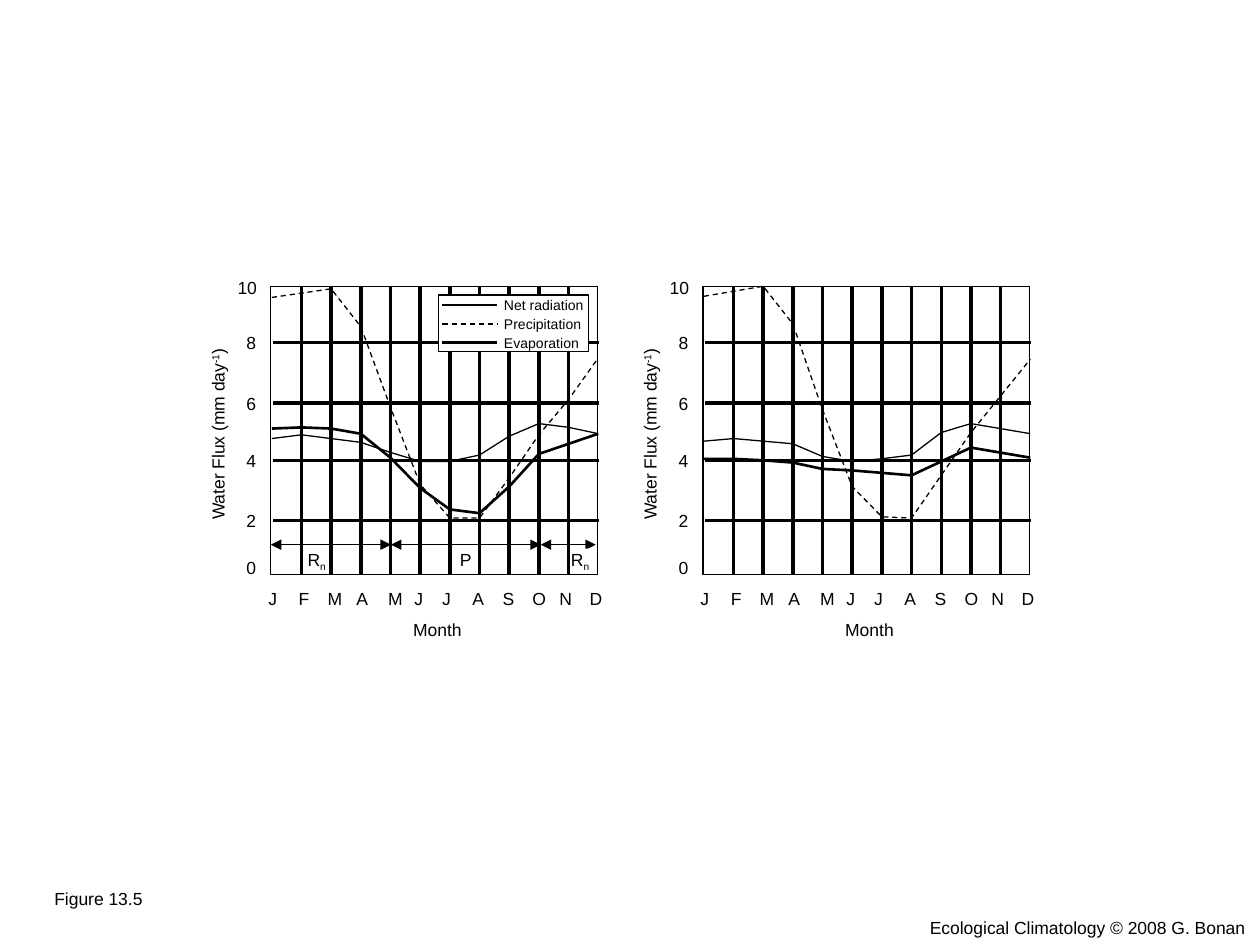
import pptx
import pptx.dml.color
import pptx.enum.dml
import pptx.enum.shapes
import pptx.enum.text
import pptx.oxml
import pptx.oxml.ns
import pptx.util

Cm = pptx.util.Cm
Pt = pptx.util.Pt
ALIGN = pptx.enum.text.PP_ALIGN
DASH = pptx.enum.dml.MSO_LINE.DASH
BLACK = pptx.dml.color.RGBColor(0x00, 0x00, 0x00)
WHITE = pptx.dml.color.RGBColor(0xFF, 0xFF, 0xFF)

PANEL_WIDTH, PANEL_HEIGHT, PANEL_TOP = 6.58, 5.82, 5.77
MONTH_STEP = PANEL_WIDTH / 11
MONTHS = "JFMAMJJASOND"
MONTH_CENTRES = (0.04, 0.67, 1.27, 1.84, 2.49, 2.98,
                 3.54, 4.18, 4.79, 5.4, 5.94, 6.55)
# Tick label and its distance below the top of the panel
TICKS = {"10": 0.02, "8": 1.14, "6": 2.36, "4": 3.51, "2": 4.72, "0": 5.68}

STYLES = {
    "Net radiation": {"width": 0.75},
    "Precipitation": {"width": 0.75, "dash": DASH},
    "Evaporation": {"width": 1.5},
}
# Water flux in mm per day from January to December; None adds no point
LEFT_SERIES = {
    "Net radiation": (4.72, 4.85, 4.72, 4.59, 4.24, 3.93,
                      3.93, 4.15, 4.8, 5.24, 5.11, 4.89),
    "Precipitation": (9.61, None, 9.91, 8.6, 5.81, 3.14,
                      1.97, 1.97, 3.36, 4.85, 6.07, 7.51),
    "Evaporation": (5.07, 5.11, 5.07, 4.89, 4.06, 3.01,
                    2.27, 2.14, 3.06, 4.19, None, 4.89),
}
RIGHT_SERIES = {
    "Precipitation": (9.65, None, 10, 8.69, 5.72, 3.06,
                      2.01, 1.97, None, 4.93, None, 7.47),
    "Net radiation": (4.63, 4.72, 4.63, 4.54, 4.1, 3.93,
                      4.02, 4.15, 4.93, 5.24, None, 4.89),
    "Evaporation": (4.02, 4.02, 3.97, 3.89, 3.67, 3.62,
                    None, 3.45, None, 4.41, None, 4.06),
}


def format_text(frame, spans, size=10, align=ALIGN.LEFT, wrap=False, inset=None):
    """Fill a text frame with (text, baseline percent) spans or one string."""
    if isinstance(spans, str):
        spans = [(spans, 0)]
    frame.word_wrap = wrap
    frame.auto_size = pptx.enum.text.MSO_AUTO_SIZE.SHAPE_TO_FIT_TEXT
    frame.vertical_anchor = pptx.enum.text.MSO_ANCHOR.TOP
    if inset is not None:
        frame.margin_left = frame.margin_right = Cm(inset)
        frame.margin_top = frame.margin_bottom = Cm(inset)
    para = frame.paragraphs[0]
    para.alignment = align
    for text, baseline in spans:
        span = para.add_run()
        span.text = text
        span.font.name = "Arial"
        span.font.size = Pt(size)
        span.font.color.rgb = BLACK
        if baseline:
            span.font._element.set("baseline", str(baseline * 1000))


def add_label(page, spans, centre_x, centre_y, width, height=0.68, **options):
    box = page.shapes.add_textbox(Cm(centre_x - width / 2), Cm(centre_y - height / 2),
                                  Cm(width), Cm(height))
    format_text(box.text_frame, spans, **options)
    return box


def format_line(line, width, dash=None):
    line.color.rgb = BLACK
    line.width = Pt(width)
    if dash is not None:
        line.dash_style = dash


def add_line(page, x1, y1, x2, y2, width=0, dash=None, arrows=False):
    line = page.shapes.add_connector(pptx.enum.shapes.MSO_CONNECTOR.STRAIGHT,
                                     Cm(x1), Cm(y1), Cm(x2), Cm(y2))
    format_line(line.line, width, dash)
    if arrows:
        outline = line.line._get_or_add_ln()
        for end in ("a:headEnd", "a:tailEnd"):
            outline.append(pptx.oxml.parse_xml(
                f'<{end} {pptx.oxml.ns.nsdecls("a")} type="triangle"/>'))
    line._element.spPr.append(pptx.oxml.parse_xml(
        f'<a:effectLst {pptx.oxml.ns.nsdecls("a")}/>'))


def add_rectangle(page, left, top, width, height, filled=False, outlined=True):
    box = page.shapes.add_shape(pptx.enum.shapes.MSO_SHAPE.RECTANGLE,
                                Cm(left), Cm(top), Cm(width), Cm(height))
    box.shadow.inherit = False
    if filled:
        box.fill.solid()
        box.fill.fore_color.rgb = WHITE
    else:
        box.fill.background()
    if outlined:
        format_line(box.line, 0.75)
    else:
        box.line.fill.background()
    return box


def add_curve(page, left, top, values, style):
    points = [(Cm(left + month * MONTH_STEP),
               Cm(top + PANEL_HEIGHT * (1 - value / 10)))
              for month, value in enumerate(values) if value is not None]
    builder = page.shapes.build_freeform(*points[0])
    builder.add_line_segments(points[1:], close=False)
    curve = builder.convert_to_shape()
    curve.shadow.inherit = False
    curve.fill.background()
    format_line(curve.line, **style)


def add_panel(page, left, top, series):
    """Draw one graph: frame, grid, curves and axis labels."""
    bottom = top + PANEL_HEIGHT
    add_rectangle(page, left, top, PANEL_WIDTH, PANEL_HEIGHT)
    for month in range(1, 11):
        x = left + 0.02 + month * MONTH_STEP
        add_line(page, x, bottom, x, top)
    for label, offset in TICKS.items():
        if label not in ("0", "10"):
            add_line(page, left + 0.04, top + offset,
                     left + 0.04 + PANEL_WIDTH, top + offset)
        width = 0.71 if len(label) == 1 else 0.89
        add_label(page, label, left - 0.03 - width / 2, top + offset, width)
    for name, values in series.items():
        add_curve(page, left + 0.02, top, values, STYLES[name])
    for month, centre in zip(MONTHS, MONTH_CENTRES):
        add_label(page, month, left + centre, top + 6.29, 0.75, align=ALIGN.CENTER)
    title = add_label(page, [("Water Flux (mm day", 0), ("-1", 30), (")", 0)],
                      left - 1.07, top + 2.93, 4.06, wrap=True)
    title.rotation = 270
    add_label(page, "Month", left + 3.37, top + 6.92, 1.5)


def add_legend(page, left, top):
    add_rectangle(page, left, top, 3.02, 1.14, filled=True)
    widths = (2.13, 2.08, 2.03)
    for (name, style), offset, width in zip(STYLES.items(), (0.2, 0.58, 0.95), widths):
        y = top + offset
        add_line(page, left + 0.08, y, left + 1.18, y, **style)
        add_label(page, name, left + 1.07 + width / 2, y, width, 0.58, size=8)


def add_seasons(page, left, top):
    """Mark which flux limits evaporation in each part of the year."""
    bounds = (0, 2.42, 5.44, 6.55)
    for start, end in zip(bounds, bounds[1:]):
        add_line(page, left + start, top, left + end, top, width=0.75, arrows=True)
    radiation = [("R", 0), ("n", -25)]
    for spans, offset, width in ((radiation, 0.74, 0.38), (radiation, 6.05, 0.38),
                                 ("P", 3.81, 0.23)):
        box = add_rectangle(page, left + offset, top + 0.08, width, 0.43,
                            filled=True, outlined=False)
        format_text(box.text_frame, spans, inset=0)


def add_captions(page):
    title = page.shapes.title
    title.left, title.top, title.width, title.height = Cm(0.84), Cm(17.78), Cm(2.29), Cm(0.68)
    format_text(title.text_frame, "Figure 13.5")
    add_label(page, "Ecological Climatology © 2008 G. Bonan", 21.95, 18.71, 6.91)


def main():
    deck = pptx.Presentation()
    deck.slide_width, deck.slide_height = Cm(25.4), Cm(19.05)
    page = deck.slides.add_slide(deck.slide_layouts[5])
    left_panel, right_panel = 5.46, 14.17
    add_panel(page, right_panel, PANEL_TOP, RIGHT_SERIES)
    add_panel(page, left_panel, PANEL_TOP, LEFT_SERIES)
    add_legend(page, left_panel + 3.38, PANEL_TOP + 0.18)
    add_seasons(page, left_panel, PANEL_TOP + 5.21)
    add_captions(page)
    deck.save("out.pptx")


if __name__ == "__main__":
    main()
